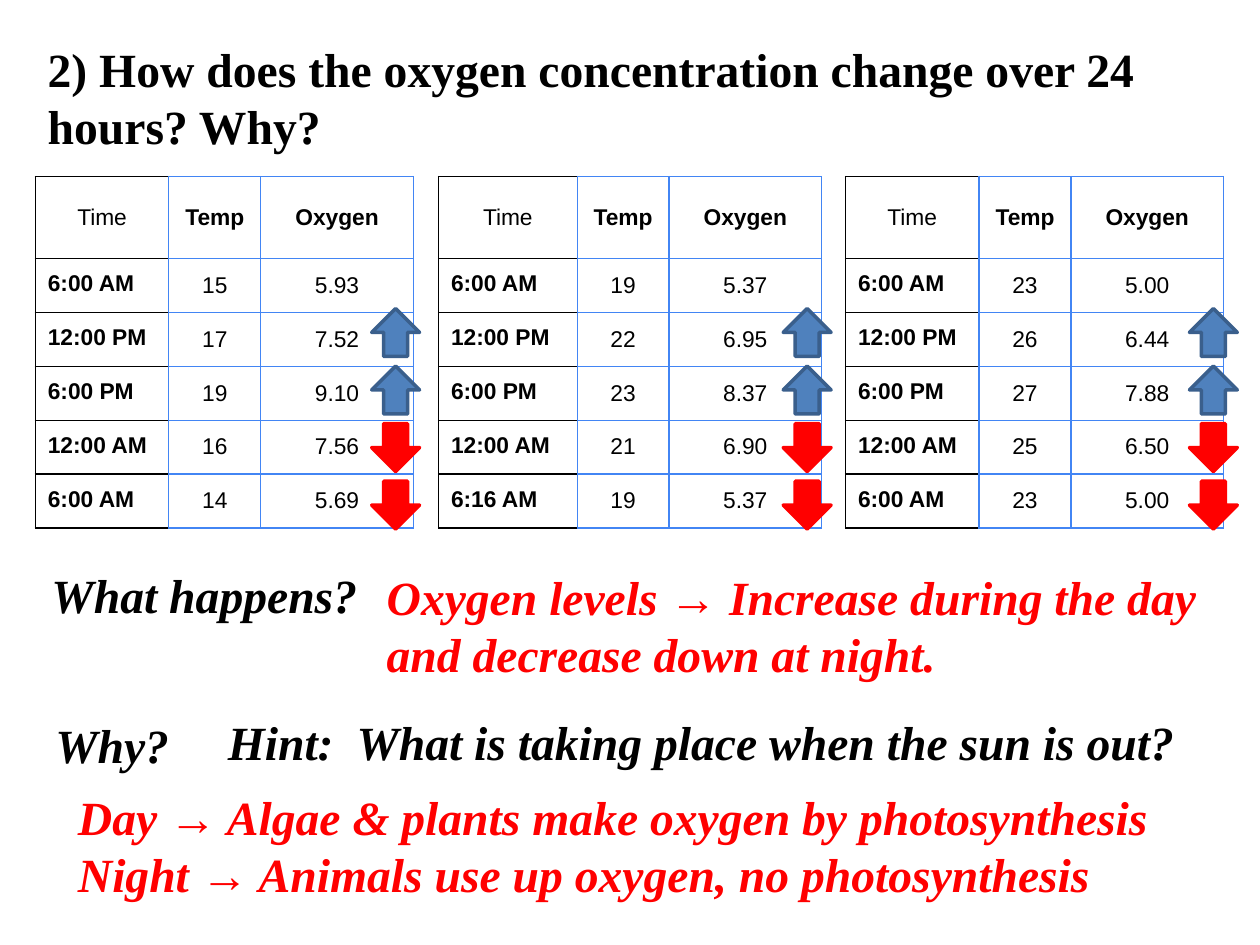
import itertools
from collections import namedtuple

import pptx
import pptx.dml.color
import pptx.enum.shapes
import pptx.enum.text
import pptx.oxml
import pptx.oxml.ns
import pptx.util

Box = namedtuple("Box", "left top width height")  # percent of slide width and height

COLORS = {
    "ink": "000000",
    "answer": "FF0000",
    "grid": "4285F4",
    "rise": "4F81BD",
    "rise_edge": "3A5F8C",
    "fall": "FF0000",
}
SLIDE_WIDTH = pptx.util.Inches(10)
SLIDE_HEIGHT = pptx.util.Inches(7.5)

HEADINGS = ("Time", "Temp", "Oxygen")
TIMES = ("6:00 AM", "12:00 PM", "6:00 PM", "12:00 AM", "6:00 AM")
LATE_TIMES = TIMES[:-1] + ("6:16 AM",)
HEADER_HEIGHT, ROW_HEIGHT = 8.67, 5.71
TEMP_WIDTH, OXYGEN_WIDTH = 7.3, 12.1
ARROW_WIDTH, ARROW_HEIGHT, ARROW_PITCH = 3.8, 5.07, 6.09

# table box, share of table width at the arrows' left edge, times, temperatures, oxygen
READINGS = (
    (Box(2.8, 18.67, 30, 37.2), 0.89, TIMES,
     (15, 17, 19, 16, 14), (5.93, 7.52, 9.10, 7.56, 5.69)),
    (Box(34.8, 18.67, 30.4, 37.2), 0.9, LATE_TIMES,
     (19, 22, 23, 21, 19), (5.37, 6.95, 8.37, 6.90, 5.37)),
    (Box(67.1, 18.67, 30, 37.2), 0.91, TIMES,
     (23, 26, 27, 25, 23), (5.00, 6.44, 7.88, 6.50, 5.00)),
)

# box, lines, colour, italic
TEXTS = (
    (Box(2.8, 3.6, 95.7, 13.6),
     ["2) How does the oxygen concentration change over 24 hours? Why?"], "ink", False),
    (Box(3.1, 59.2, 81.1, 7.47), ["What happens?"], "ink", True),
    (Box(29.7, 59.47, 67.1, 13.6),
     ["Oxygen levels → Increase during the day and decrease down at night."],
     "answer", True),
    (Box(3.4, 75.07, 81.1, 7.47), ["Why?"], "ink", True),
    (Box(5.2, 82.67, 87.4, 13.6),
     ["Day → Algae & plants make oxygen by photosynthesis",
      "Night → Animals use up oxygen, no photosynthesis"], "answer", True),
    (Box(17.1, 74.8, 78.2, 7.47),
     ["Hint:  What is taking place when the sun is out?"], "ink", True),
)


def across(share):
    return round(SLIDE_WIDTH * share / 100)


def down(share):
    return round(SLIDE_HEIGHT * share / 100)


def place(box):
    return across(box.left), down(box.top), across(box.width), down(box.height)


def color(name):
    return pptx.dml.color.RGBColor.from_string(COLORS[name])


def style(font, face, size, color_name, bold, italic=False):
    font.name = face
    font.size = pptx.util.Pt(size)
    font.color.rgb = color(color_name)
    font.bold = bold
    font.italic = italic


def add_text(page, box, lines, color_name, italic):
    frame = page.shapes.add_textbox(*place(box)).text_frame
    frame.word_wrap = True
    frame.text = "\n".join(lines)
    for para in frame.paragraphs:
        style(para.font, "Times New Roman", 27.2, color_name, True, italic)


def set_borders(cell, edge_colors):
    """Draw the cell's left, right, top and bottom lines in the named colours."""
    properties = cell._tc.get_or_add_tcPr()
    for position, (edge, name) in enumerate(zip("LRTB", edge_colors)):
        line = pptx.oxml.parse_xml(
            f'<a:ln{edge} {pptx.oxml.ns.nsdecls("a")} w="9525"><a:solidFill>'
            f'<a:srgbClr val="{COLORS[name]}"/></a:solidFill></a:ln{edge}>')
        properties.insert(position, line)


def fill_cell(cell, text, is_header, is_time):
    cell.fill.background()
    cell.margin_left = cell.margin_right = pptx.util.Inches(0.1)
    cell.margin_top = cell.margin_bottom = pptx.util.Inches(0.1)
    cell.text = text
    para = cell.text_frame.paragraphs[0]
    style(para.font, "Arial", 13, "ink", is_header != is_time)
    if is_header or not is_time:
        para.alignment = pptx.enum.text.PP_ALIGN.CENTER
        cell.vertical_anchor = pptx.enum.text.MSO_ANCHOR.MIDDLE
    if is_time:
        set_borders(cell, ("ink", "grid", "ink", "ink"))
    else:
        set_borders(cell, ("grid",) * 4)


def add_readings_table(page, box, times, temps, oxygen):
    rows = [HEADINGS]
    rows += [(time, str(temp), f"{level:.2f}")
             for time, temp, level in zip(times, temps, oxygen)]
    table = page.shapes.add_table(len(rows), len(HEADINGS), *place(box)).table
    table.first_row = table.horz_banding = False
    widths = (box.width - TEMP_WIDTH - OXYGEN_WIDTH, TEMP_WIDTH, OXYGEN_WIDTH)
    for column, width in zip(table.columns, widths):
        column.width = across(width)
    for index, texts in enumerate(rows):
        table.rows[index].height = down(ROW_HEIGHT if index else HEADER_HEIGHT)
        for column, text in enumerate(texts):
            fill_cell(table.cell(index, column), text, index == 0, column == 0)


def add_trend_arrows(page, box, left_share, oxygen):
    """Mark each step between readings with a rising or falling arrow."""
    shapes = pptx.enum.shapes.MSO_SHAPE
    left = box.left + left_share * box.width
    first_top = box.top + HEADER_HEIGHT + ROW_HEIGHT - 0.4
    for step, (before, after) in enumerate(itertools.pairwise(oxygen)):
        rising = after > before
        spot = Box(left, first_top + step * ARROW_PITCH, ARROW_WIDTH, ARROW_HEIGHT)
        arrow = page.shapes.add_shape(
            shapes.UP_ARROW if rising else shapes.DOWN_ARROW, *place(spot))
        arrow.shadow.inherit = False
        arrow.fill.solid()
        arrow.fill.fore_color.rgb = color("rise" if rising else "fall")
        arrow.line.color.rgb = color("rise_edge" if rising else "fall")
        arrow.line.width = pptx.util.Pt(2)


def main():
    deck = pptx.Presentation()
    deck.slide_width, deck.slide_height = SLIDE_WIDTH, SLIDE_HEIGHT
    page = deck.slides.add_slide(deck.slide_layouts[6])
    for box, arrow_share, times, temps, oxygen in READINGS:
        add_readings_table(page, box, times, temps, oxygen)
        add_trend_arrows(page, box, arrow_share, oxygen)
    for text in TEXTS:
        add_text(page, *text)
    deck.save("out.pptx")


if __name__ == "__main__":
    main()
